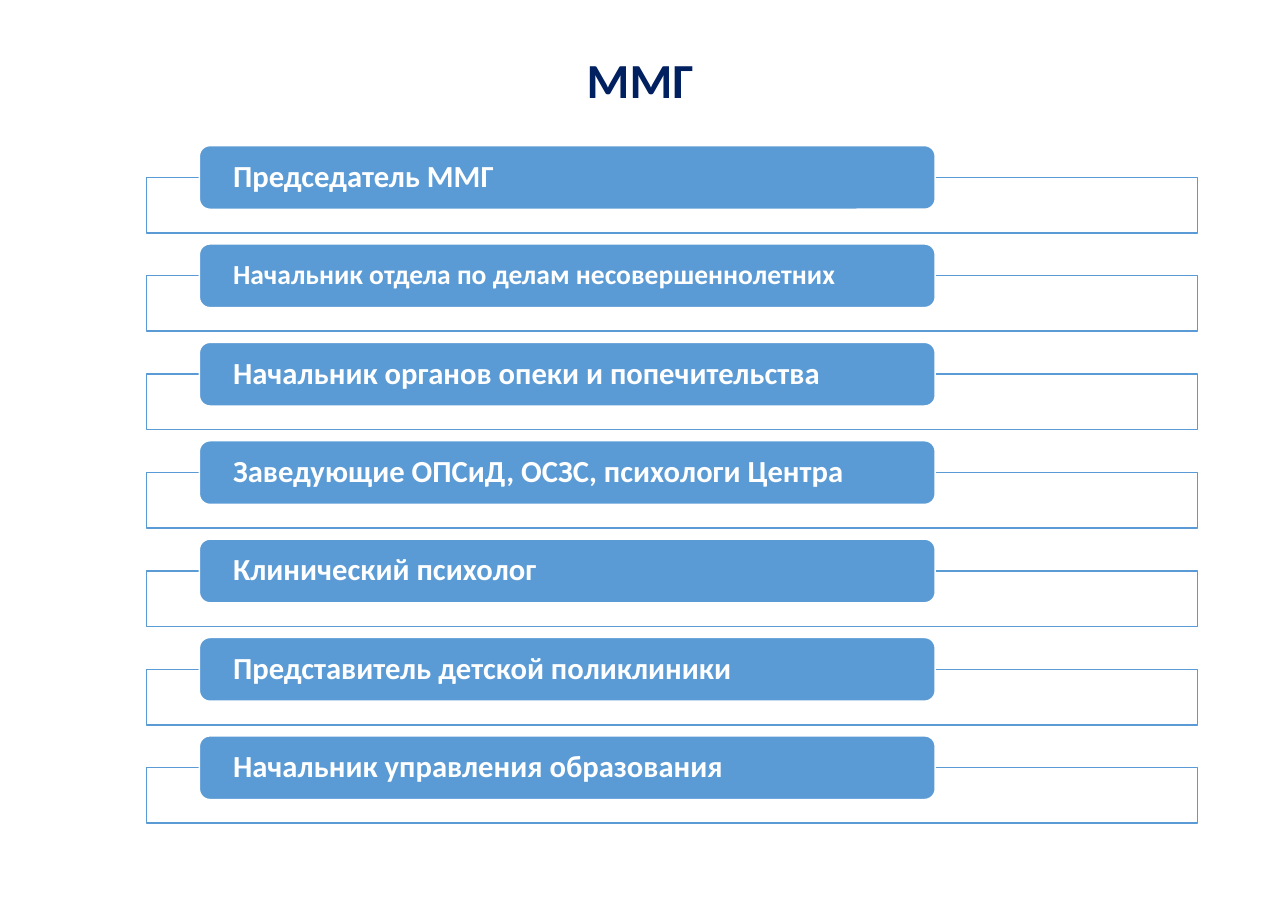
import pptx
import pptx.util
import pptx.dml.color
import pptx.enum.shapes
import pptx.enum.text
import pptx.oxml
import pptx.oxml.ns
from dataclasses import dataclass

WIDE, HIGH = pptx.util.Inches(11.69), pptx.util.Inches(8.27)
FORM = pptx.enum.shapes.MSO_SHAPE
ALIGN = pptx.enum.text.PP_ALIGN
PITCH = 10.8

ROLES = [
    "Председатель ММГ",
    "Начальник отдела по делам несовершеннолетних",
    "Начальник органов опеки и попечительства",
    "Заведующие ОПСиД, ОСЗС, психологи Центра",
    "Клинический психолог",
    "Представитель детской поликлиники",
    "Начальник управления образования",
]


@dataclass(frozen=True)
class Theme:
    face: str = "Calibri"
    navy: str = "002060"
    blue: str = "5B9BD5"
    white: str = "FFFFFF"
    head: int = 32
    body: int = 20
    small: int = 18


THEME = Theme()


def tint(code):
    return pptx.dml.color.RGBColor.from_string(code)


def across(share):
    return round(WIDE * share / 100)


def down(share):
    return round(HIGH * share / 100)


def place(left, top, width, height):
    return across(left), down(top), across(width), down(height)


def apply(item, style):
    for key, value in style.items():
        setattr(item, key, value)


def write(shape, text, size, color, frame, para):
    apply(shape.text_frame, {"word_wrap": True, **frame})
    line = shape.text_frame.paragraphs[0]
    apply(line, para)
    run = line.add_run()
    run.text = text
    apply(run.font, {"name": THEME.face, "size": pptx.util.Pt(size), "bold": True})
    run.font.color.rgb = tint(color)


def block(slide, form, area, fill, edge):
    shape = slide.shapes.add_shape(form, *place(*area))
    shape.shadow.inherit = False
    shape.fill.solid()
    shape.fill.fore_color.rgb = tint(fill)
    shape.line.color.rgb = tint(edge)
    shape.line.width = pptx.util.Pt(1)
    return shape


def fade(shape, share):
    color = shape.fill._xPr.find(".//" + pptx.oxml.ns.qn("a:srgbClr"))
    alpha = pptx.oxml.parse_xml(
        f'<a:alpha {pptx.oxml.ns.nsdecls("a")} val="{share * 1000}"/>')
    color.append(alpha)


def title(slide, text):
    box = slide.shapes.add_textbox(*place(3.68, 4.84, 92.04, 7.8))
    write(box, text, THEME.head, THEME.navy, {}, {"alignment": ALIGN.CENTER})


def role(slide, row, text):
    drop = row * PITCH
    frame = block(slide, FORM.RECTANGLE, (11.38, 19.47 + drop, 81.6, 6.1),
                  THEME.white, THEME.blue)
    fade(frame, 90)
    label = block(slide, FORM.ROUNDED_RECTANGLE, (15.48, 15.98 + drop, 57.14, 7),
                  THEME.blue, THEME.white)
    size = THEME.small if len(text) > 42 else THEME.body
    side = across(2.38)
    write(label, text, size, THEME.white,
          {"margin_left": side, "margin_right": side,
           "margin_top": 0, "margin_bottom": 0,
           "vertical_anchor": pptx.enum.text.MSO_ANCHOR.MIDDLE},
          {"alignment": ALIGN.LEFT, "line_spacing": 0.9})


def main():
    deck = pptx.Presentation()
    apply(deck, {"slide_width": WIDE, "slide_height": HIGH})
    slide = deck.slides.add_slide(deck.slide_layouts[6])
    title(slide, "ММГ")
    for row, text in enumerate(ROLES):
        role(slide, row, text)
    deck.save("out.pptx")


if __name__ == "__main__":
    main()
